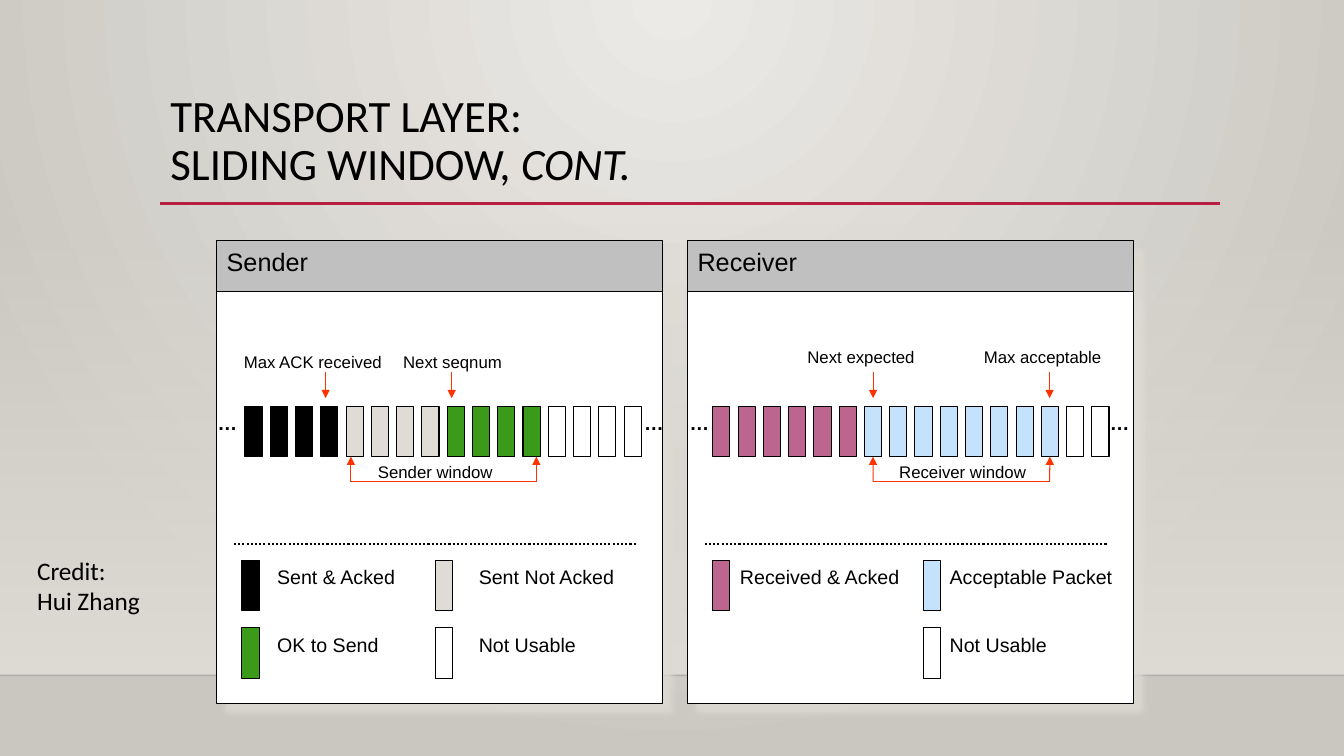
from lxml import etree
from pptx import Presentation
from pptx.dml.color import RGBColor
from pptx.enum.dml import MSO_LINE
from pptx.enum.shapes import MSO_CONNECTOR, MSO_SHAPE
from pptx.enum.text import MSO_ANCHOR, MSO_AUTO_SIZE, PP_ALIGN
from pptx.oxml.ns import qn
from pptx.util import Inches, Pt

RECT = MSO_SHAPE.RECTANGLE
STRAIGHT = MSO_CONNECTOR.STRAIGHT
DOTTED = MSO_LINE.ROUND_DOT
TOP, LEFT = MSO_ANCHOR.TOP, PP_ALIGN.LEFT
NO_FIT, GROW = MSO_AUTO_SIZE.NONE, MSO_AUTO_SIZE.SHAPE_TO_FIT_TEXT

BLACK, WHITE, GREY, RED = "000000", "FFFFFF", "C0C0C0", "FF3300"
BEIGE, GREEN, PLUM, SKY = "DFDBD5", "3C9A1A", "BC658E", "C5E2FD"
BAR_W, BAR_H, PITCH = 0.17, 0.5, 3.76 / 15
BAR_TOP, BRACKET_Y = 4.03, 4.78
LEGEND_ROWS = (5.56, 6.23)

PANELS = [
    dict(
        name="Sender", left=2.15, first_bar=2.43, dots=(2.06, 6.29),
        bars=[(BLACK, 4), (BEIGE, 4), (GREEN, 4), (WHITE, 4)],
        notes=[("Max ACK received", 2.32, 3.44, 1.67),
               ("Next seqnum", 3.9, 3.44, 1.5),
               ("Sender window", 3.65, 4.53, 1.5)],
        pointers=(3.23, 4.48), bracket=(3.48, 5.32), joined=None,
        legend=[("Sent & Acked", BLACK, 2.4, 2.65, 0, 1.5),
                ("OK to Send", GREEN, 2.4, 2.65, 1, 1.5),
                ("Sent Not Acked", BEIGE, 4.32, 4.65, 0, 1.75),
                ("Not Usable", WHITE, 4.32, 4.65, 1, 1.75)]),
    dict(
        name="Receiver", left=6.82, first_bar=7.07, dots=(6.74, 10.91),
        bars=[(PLUM, 6), (SKY, 8), (WHITE, 2)],
        notes=[("Next expected", 7.91, 3.39, 1.5),
               ("Max acceptable", 9.66, 3.39, 1.5),
               ("Receiver window", 8.82, 4.53, 1.5)],
        pointers=(8.66, 10.41), bracket=(8.66, 10.41), joined=(6, 13),
        legend=[("Received & Acked", PLUM, 7.07, 7.24, 0, 2.09),
                ("Acceptable Packet", SKY, 9.16, 9.32, 0, 1.92),
                ("Not Usable", WHITE, 9.16, 9.32, 1, 1.75)]),
]


def rgb(color):
    return RGBColor.from_string(color)


def add_text(p, text, size=14, font="Arial", color=BLACK, bold=False, italic=False):
    r = p.add_run()
    r.text = text
    r.font.size, r.font.name = Pt(size), font
    r.font.bold, r.font.italic = bold, italic
    r.font.color.rgb = rgb(color)


def add_alpha(clr, percent):
    etree.SubElement(clr, qn("a:alpha"), val=str(percent * 1000))


class Deck:
    def __init__(self):
        self.prs = Presentation()
        self.prs.slide_width, self.prs.slide_height = Inches(13.33), Inches(7.5)
        self.s = self.prs.slides.add_slide(self.prs.slide_layouts[5])

    def gradient(self, fill, start, end):
        fill.gradient()
        for stop, color, position in zip(fill.gradient_stops, (start, end), (0, 1)):
            stop.color.rgb = rgb(color)
            stop.position = position

    def background(self, start, end):
        self.gradient(self.s.background.fill, start, end)
        lin = next(self.s.element.iter(qn("a:lin")))
        radial = etree.Element(qn("a:path"), {"path": "circle"})
        etree.SubElement(radial, qn("a:fillToRect"), l="43000", t="0", r="43000", b="100000")
        lin.getparent().replace(lin, radial)

    def title(self, parts, x, y, w, h):
        sp = self.s.shapes.title
        sp.left, sp.top, sp.width, sp.height = map(Inches, (x, y, w, h))
        tf = sp.text_frame
        tf.word_wrap, tf.auto_size, tf.vertical_anchor = True, NO_FIT, TOP
        p = tf.paragraphs[0]
        p.alignment, p.line_spacing = LEFT, 0.9
        for i, part in enumerate(parts):
            if i:
                p.add_line_break()
            for text, italic in part:
                add_text(p, text, size=32, font="Calibri", italic=italic)

    def rect(self, x, y, w, h, fill, shadow=False):
        sp = self.s.shapes.add_shape(RECT, *map(Inches, (x, y, w, h)))
        sp.shadow.inherit = False
        sp.fill.solid()
        sp.fill.fore_color.rgb = rgb(fill)
        sp.line.color.rgb = rgb(BLACK)
        sp.line.width = Pt(0.75)
        if shadow:
            effects = sp.element.spPr.find(qn("a:effectLst"))
            outer = etree.SubElement(
                effects, qn("a:outerShdw"), blurRad=str(Pt(5)), dist=str(Pt(8.5)),
                dir="2700000", algn="ctr", rotWithShape="0")
            add_alpha(etree.SubElement(outer, qn("a:srgbClr"), val=BEIGE), 75)
        return sp

    def fade(self, x, y, w, h, color):
        sp = self.rect(x, y, w, h, color)
        sp.line.fill.background()
        self.gradient(sp.fill, color, color)
        sp.fill.gradient_angle = 270
        add_alpha(next(sp.element.spPr.iter(qn("a:srgbClr"))), 0)

    def bar(self, x, y, fill):
        return self.rect(x, y, BAR_W, BAR_H, fill)

    def text(self, x, y, w, h, lines, wrap=True, **fmt):
        tf = self.s.shapes.add_textbox(*map(Inches, (x, y, w, h))).text_frame
        tf.word_wrap, tf.auto_size = wrap, GROW
        for i, line in enumerate(lines):
            p = tf.add_paragraph() if i else tf.paragraphs[0]
            add_text(p, line, **fmt)

    def line(self, x1, y1, x2, y2, color, width=0.75, dash=None, arrow=False, alpha=None):
        cxn = self.s.shapes.add_connector(STRAIGHT, *map(Inches, (x1, y1, x2, y2)))
        cxn.line.color.rgb = rgb(color)
        cxn.line.width = Pt(width)
        if dash:
            cxn.line.dash_style = dash
        spPr = cxn.element.spPr
        if alpha:
            add_alpha(next(spPr.iter(qn("a:srgbClr"))), alpha)
        if arrow:
            etree.SubElement(spPr.find(qn("a:ln")), qn("a:tailEnd"), type="triangle")
        etree.SubElement(spPr, qn("a:effectLst"))
        return cxn

    def panel(self, name, left, first_bar, dots, bars, notes, pointers, bracket, joined, legend):
        header = self.rect(left, 2.39, 4.42, 4.09, GREY, shadow=True)
        tf = header.text_frame
        tf.word_wrap, tf.vertical_anchor = False, TOP
        tf.paragraphs[0].alignment = LEFT
        add_text(tf.paragraphs[0], name, size=18)
        self.rect(left, 2.89, 4.42, 4.09, WHITE, shadow=True)

        colors = [color for color, count in bars for _ in range(count)]
        packets = [self.bar(first_bar + i * PITCH, BAR_TOP, color)
                   for i, color in enumerate(colors)]
        for x in dots:
            self.text(x, BAR_TOP, 0.45, 0.33, ["…"], bold=True)
        for label, x, y, w in notes:
            self.text(x, y, w, 0.3, [label], size=12)
        for x in pointers:
            self.line(x, 3.69, x, 3.95, RED, arrow=True)
        for i, x in enumerate(bracket):
            arrow = self.line(x, BRACKET_Y, x, BAR_TOP + BAR_H, RED, arrow=True)
            if joined:
                arrow.end_connect(packets[joined[i]], 2)
        self.line(bracket[0], BRACKET_Y, bracket[1], BRACKET_Y, RED)

        self.line(left + 0.17, 5.4, left + 4.17, 5.4, BLACK, width=1.5, dash=DOTTED)
        for label, color, bar_x, text_x, row, w in legend:
            self.bar(bar_x, LEGEND_ROWS[row], color)
            self.text(text_x, LEGEND_ROWS[row], w, 0.34, [label])


def main():
    deck = Deck()
    deck.background("ECEAE7", "CAC7C1")
    deck.fade(0, 2.21, 13.33, 4.49, BEIGE)
    deck.line(0, 6.7, 13.33, 6.7, "000001", width=1, alpha=20)
    deck.line(1.59, 2.02, 12.1, 2.02, "B71E42", width=2.5)
    deck.title([[("TRANSPORT LAYER:", False)],
                [("SLIDING WINDOW, ", False), ("CONT.", True)]], 1.59, 0.88, 10.5, 1.15)
    for panel in PANELS:
        deck.panel(**panel)
    deck.text(0.27, 5.46, 1.27, 0.71, ["Credit:", "Hui Zhang"], wrap=False,
              size=18, font="Calibri")
    deck.prs.save("out.pptx")


if __name__ == "__main__":
    main()
